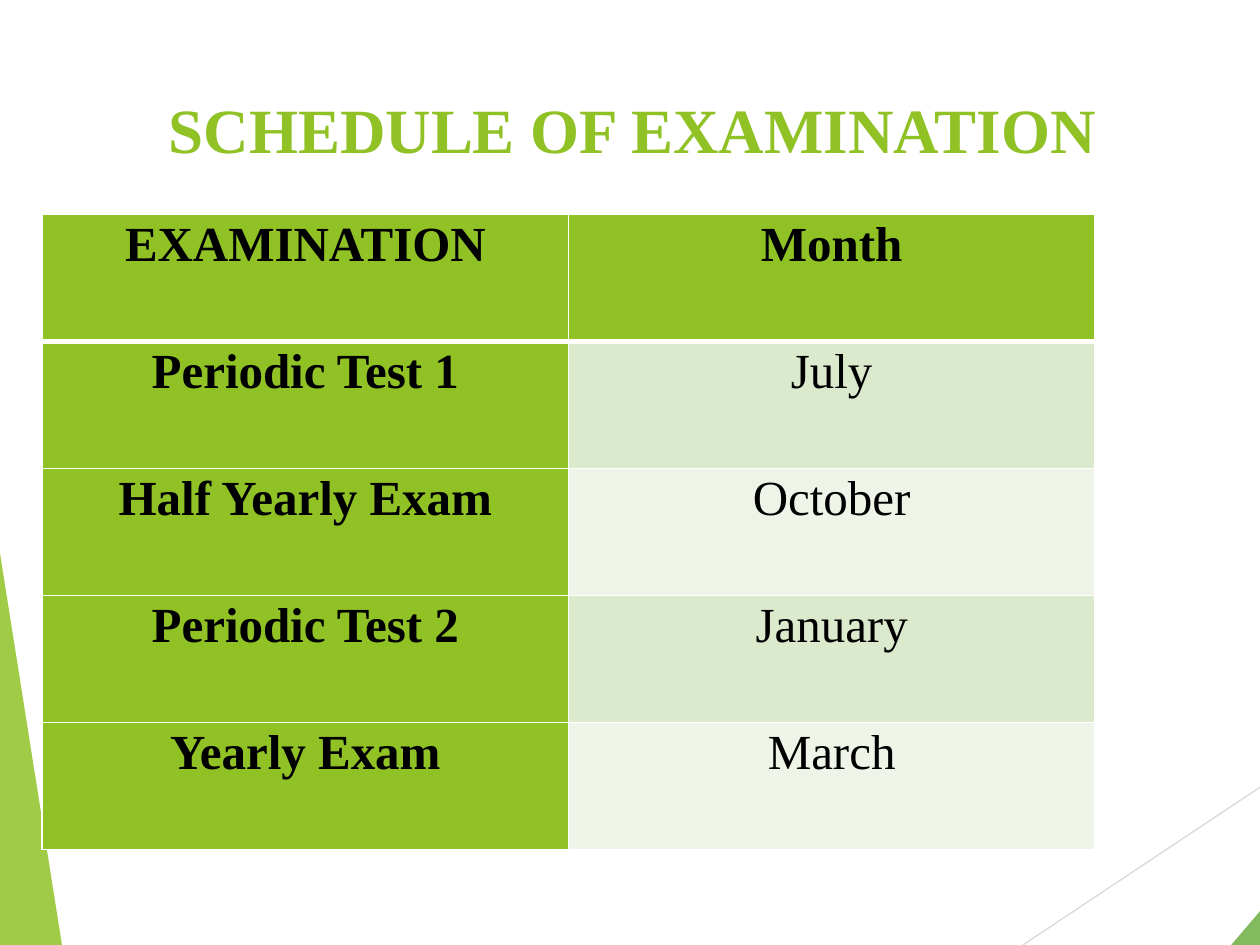
from dataclasses import dataclass

from lxml.etree import SubElement
from pptx import Presentation
from pptx.dml.color import RGBColor
from pptx.enum.shapes import MSO_CONNECTOR, MSO_SHAPE
from pptx.enum.text import PP_ALIGN
from pptx.oxml.ns import qn
from pptx.util import Cm, Pt


@dataclass
class Theme:
    font: str = "Times New Roman"
    lime: str = "90C226"
    leaf: str = "54A021"
    bands: tuple = ("DBE9CD", "EEF4E8")
    grey: str = "D9D9D9"
    white: str = "FFFFFF"
    ink: str = "000000"
    title: int = 36
    body: int = 28


theme = Theme()


def write(frame, text, size, color, bold=True, align=PP_ALIGN.LEFT, space=1.0):
    para = frame.paragraphs[0]
    para.text = text
    para.alignment = align
    para.line_spacing = space
    font = para.font
    font.name = theme.font
    font.size = Pt(size)
    font.bold = bold
    font.color.rgb = RGBColor.from_string(color)


deck = Presentation()
deck.slide_width, deck.slide_height = Cm(25.4), Cm(19.05)
slide = deck.slides.add_slide(deck.slide_layouts[6])
shapes = slide.shapes

line = shapes.add_connector(MSO_CONNECTOR.STRAIGHT, Cm(33.86), Cm(10.24), Cm(20.62), Cm(19.05))
line.line.color.rgb = RGBColor.from_string(theme.grey)
line.line.width = Pt(0.75)
SubElement(line.element.spPr, qn("a:effectLst"))

wedges = [
    (24.82, 8.46, 9.04, 10.59, 1, theme.leaf, 72),
    (0, 11.15, 1.25, 7.9, 0, theme.lime, 85),
]
for left, top, width, height, peak, color, alpha in wedges:
    wedge = shapes.add_shape(MSO_SHAPE.ISOSCELES_TRIANGLE, Cm(left), Cm(top), Cm(width), Cm(height))
    wedge.adjustments[0] = peak
    wedge.shadow.inherit = False
    wedge.line.fill.background()
    wedge.fill.solid()
    wedge.fill.fore_color.rgb = RGBColor.from_string(color)
    tint = wedge.element.spPr.find(".//" + qn("a:srgbClr"))
    SubElement(tint, qn("a:alpha"), val=str(alpha * 1000))

title = shapes.add_textbox(Cm(1.88), Cm(1.7), Cm(23.88), Cm(3.66)).text_frame
title.word_wrap = True
title.margin_left = Cm(1.52)
title.margin_top = Cm(0.13)
write(title, "SCHEDULE OF EXAMINATION", size=theme.title, color=theme.lime)

rows = [
    ("EXAMINATION", "Month"),
    ("Periodic Test 1", "July"),
    ("Half Yearly Exam", "October"),
    ("Periodic Test 2", "January"),
    ("Yearly Exam", "March"),
]
wide, high = 10.61, 2.56
grid = shapes.add_table(len(rows), 2, Cm(0.85), Cm(4.32), Cm(2 * wide), Cm(len(rows) * high)).table
for col in grid.columns:
    col.width = Cm(wide)
for r, row in enumerate(rows):
    grid.rows[r].height = Cm(high)
    for c, text in enumerate(row):
        cell = grid.cell(r, c)
        cell.margin_left = cell.margin_right = Cm(0.15)
        cell.margin_top = cell.margin_bottom = 0
        head = r == 0 or c == 0
        write(cell.text_frame, text, size=theme.body, color=theme.ink, bold=head,
              align=PP_ALIGN.CENTER, space=1.07)
        props = cell._tc.get_or_add_tcPr()
        for side in "LRTB":
            thick = (r, side) in ((0, "B"), (1, "T"))
            edge = SubElement(props, qn("a:ln" + side), w=str(Pt(3 if thick else 1)))
            paint = SubElement(edge, qn("a:solidFill"))
            SubElement(paint, qn("a:srgbClr"), val=theme.white)
        cell.fill.solid()
        color = theme.lime if head else theme.bands[(r - 1) % 2]
        cell.fill.fore_color.rgb = RGBColor.from_string(color)

deck.save("out.pptx")
